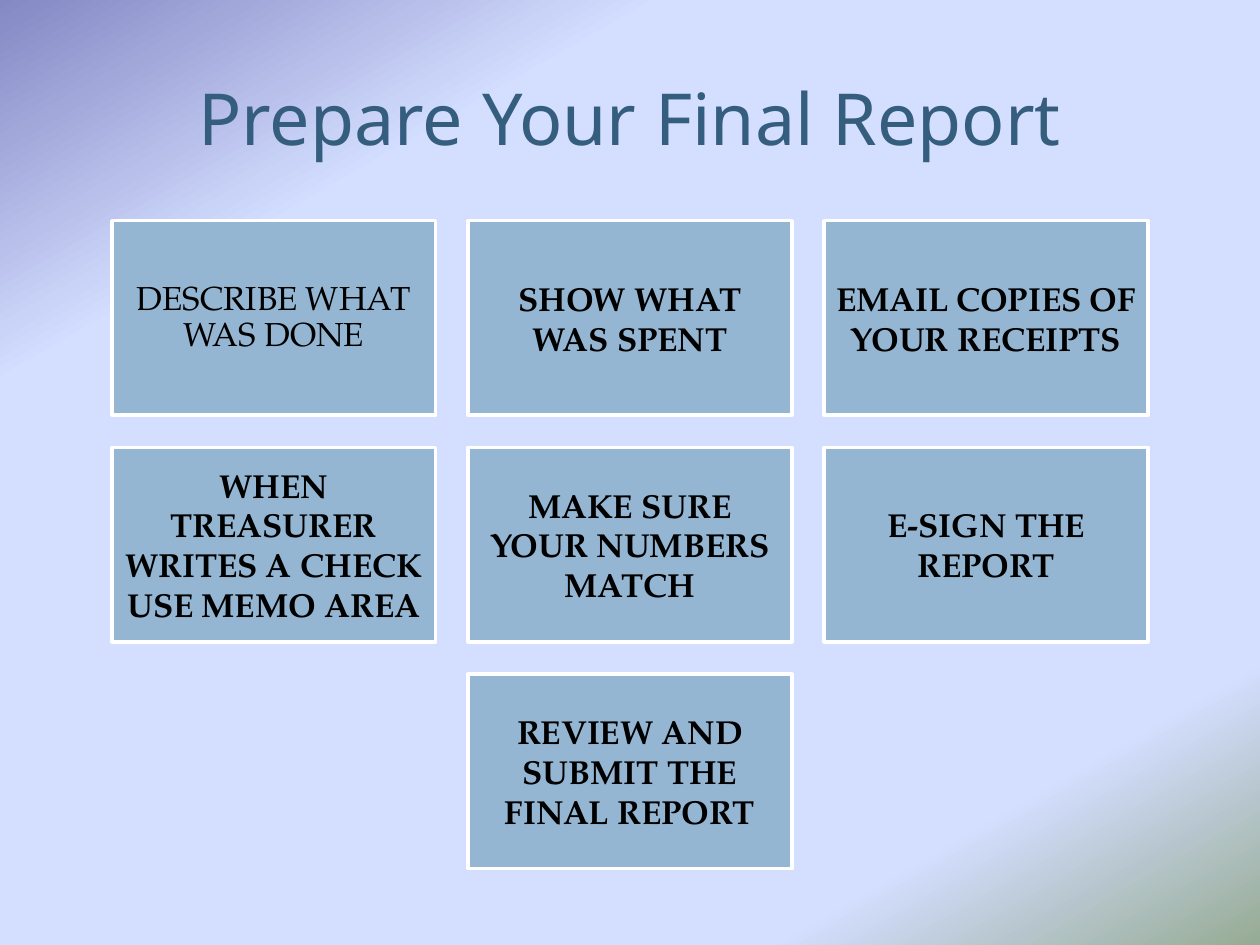
from copy import deepcopy

from pptx import Presentation
from pptx.dml.color import RGBColor
from pptx.enum.shapes import MSO_SHAPE
from pptx.enum.text import MSO_ANCHOR, PP_ALIGN
from pptx.oxml.ns import qn
from pptx.util import Cm, Pt


def color(value):
    return RGBColor.from_string(value)


deck = Presentation()
deck.slide_width, deck.slide_height = Cm(25.4), Cm(19.05)
page = deck.slides.add_slide(deck.slide_layouts[5])

background = page.background.fill
background.gradient()
background.gradient_angle = 300
stop_list = page.element.find(".//" + qn("a:gsLst"))
for _ in range(2):
    stop_list.append(deepcopy(stop_list[0]))
gradient = [(0, "8488C4"), (0.23, "D4DEFF"), (0.83, "D4DEFF"), (1, "96AB94")]
for stop, (position, value) in zip(background.gradient_stops, gradient):
    stop.position = position
    stop.color.rgb = color(value)

title = page.shapes.title
title.left, title.top, title.width, title.height = Cm(1.27), Cm(0.76), Cm(22.86), Cm(3.18)
title.text_frame.text = "Prepare Your Final Report"
title.text_frame.vertical_anchor = MSO_ANCHOR.MIDDLE
para = title.text_frame.paragraphs[0]
para.alignment = PP_ALIGN.CENTER
para.font.size = Pt(41)
para.font.name = "Noto Sans"
para.font.color.rgb = color("355D7E")

rows = [
    ["DESCRIBE WHAT WAS DONE", "SHOW WHAT WAS SPENT", "EMAIL COPIES OF YOUR RECEIPTS"],
    ["WHEN TREASURER WRITES A CHECK USE MEMO AREA", "MAKE SURE YOUR NUMBERS MATCH", "E-SIGN THE REPORT"],
    ["REVIEW AND SUBMIT THE FINAL REPORT"],
]
box_width, box_height, gap = Cm(6.53), Cm(3.92), Cm(0.65)
for row, steps in enumerate(rows):
    row_width = len(steps) * (box_width + gap) - gap
    row_left = (deck.slide_width - row_width) // 2
    for column, step in enumerate(steps):
        box = page.shapes.add_shape(
            MSO_SHAPE.RECTANGLE,
            row_left + column * (box_width + gap),
            Cm(4.45) + row * (box_height + gap),
            box_width,
            box_height,
        )
        box.shadow.inherit = False
        box.fill.solid()
        box.fill.fore_color.rgb = color("94B6D2")
        box.line.color.rgb = color("FFFFFF")
        box.line.width = Pt(2)
        frame = box.text_frame
        frame.word_wrap = True
        frame.vertical_anchor = MSO_ANCHOR.MIDDLE
        frame.margin_left = frame.margin_right = Cm(0.2)
        frame.margin_top = frame.margin_bottom = Cm(0.2)
        frame.text = step
        para = frame.paragraphs[0]
        para.alignment = PP_ALIGN.CENTER
        first = row == column == 0
        para.line_spacing = 0.9 if first else 1.0
        para.font.bold = not first
        para.font.size = Pt(19)
        para.font.name = "TeX Gyre Pagella"
        para.font.color.rgb = color("000000")

deck.save("out.pptx")
